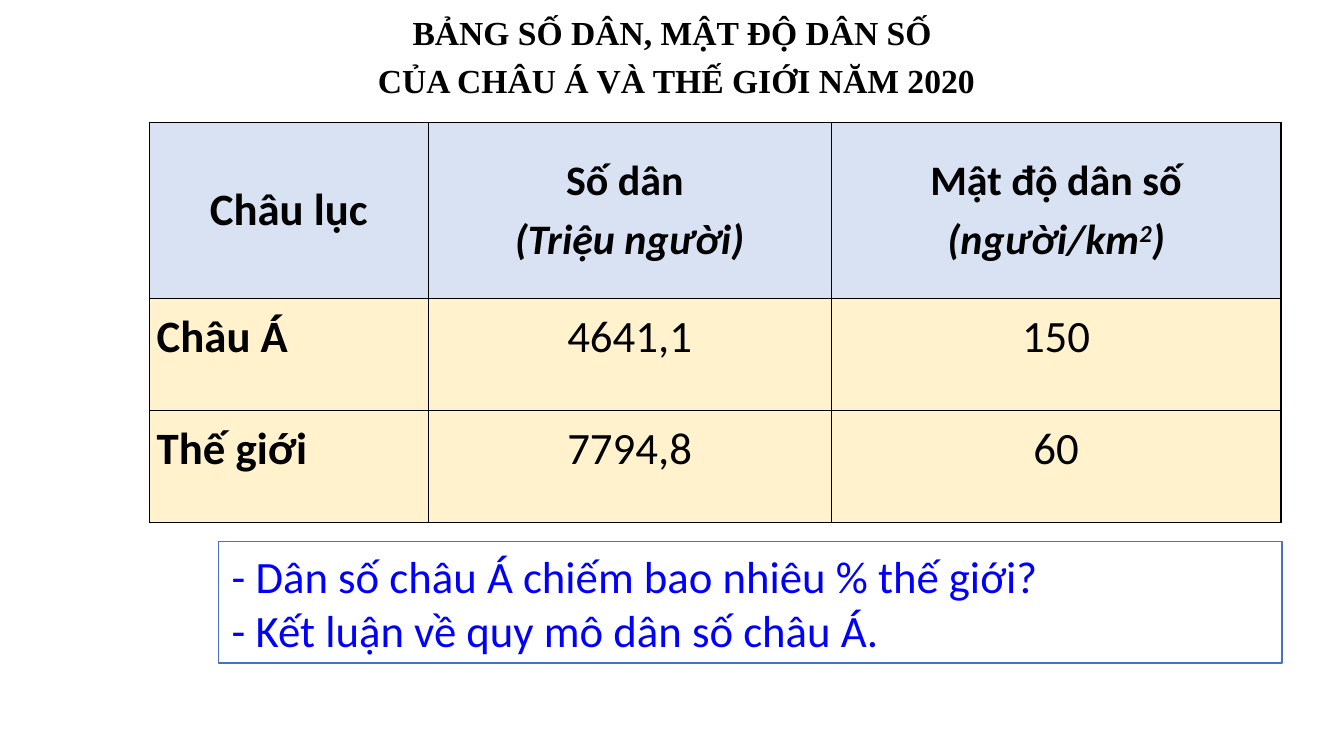
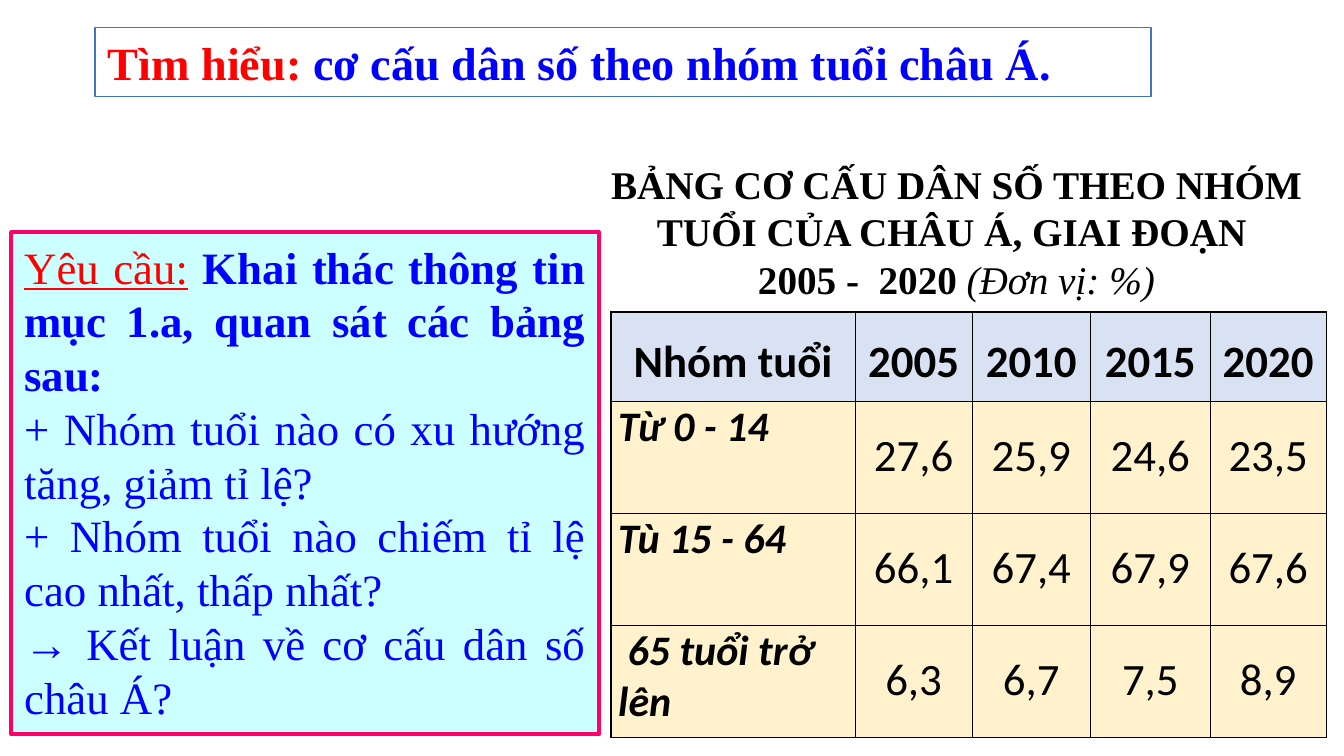
from dataclasses import dataclass, replace
from typing import Optional

from pptx import Presentation
from pptx import oxml
from pptx.dml.color import RGBColor
from pptx.enum import text
from pptx.oxml import ns
from pptx.util import Cm, Pt

SERIF, SANS = "Times New Roman", "Calibri"
BLACK, WHITE, RED, BLUE = "000000", "FFFFFF", "FF0000", "0000FF"
BOX_LINE, PINK, AQUA = "4472C4", "FF0066", "CCFFFF"
HEADER_FILL, BODY_FILL = "D9E2F3", "FFF2CC"
LEFT, CENTER, JUSTIFY = (text.PP_ALIGN.LEFT, text.PP_ALIGN.CENTER,
                         text.PP_ALIGN.JUSTIFY)
TOP, MIDDLE = text.MSO_ANCHOR.TOP, text.MSO_ANCHOR.MIDDLE


@dataclass(frozen=True)
class Style:
    size: float = 32
    font: str = SANS
    color: str = BLACK
    bold: bool = False
    italic: bool = False
    align: int = LEFT
    spacing: float = 1.0
    before: float = 0


@dataclass(frozen=True)
class Span:
    """A stretch of text that differs from its paragraph's style."""
    words: str
    color: Optional[str] = None
    bold: Optional[bool] = None
    italic: Optional[bool] = None
    underline: Optional[bool] = None
    raised: bool = False


HEADING = Style(24, SERIF, bold=True, align=CENTER)
HEADER = Style(bold=True, align=CENTER, before=6)
VALUE = Style(align=CENTER, spacing=1.2, before=6)
LABEL = Style(bold=True, spacing=1.2, before=6)


def rgb(value):
    return RGBColor.from_string(value)


def add_span(para, span):
    for number, line in enumerate(span.words.split("\n")):
        if number:
            para.add_line_break()
        run = para.add_run()
        run.text = line
        run.font.bold = span.bold
        run.font.italic = span.italic
        run.font.underline = span.underline
        if span.color:
            run.font.color.rgb = rgb(span.color)
        if span.raised:
            run.font._element.set("baseline", "30000")


def write(frame, paragraphs, style):
    """Fill a text frame; each paragraph is a string or a list of spans."""
    for number, content in enumerate(paragraphs):
        para = frame.add_paragraph() if number else frame.paragraphs[0]
        para.alignment = style.align
        para.line_spacing = style.spacing
        para.space_before = Pt(style.before)
        font = para.font
        font.size, font.name = Pt(style.size), style.font
        font.bold, font.italic = style.bold, style.italic
        font.color.rgb = rgb(style.color)
        spans = [Span(content)] if isinstance(content, str) else content
        for span in spans:
            add_span(para, span)


def place(shape, left, top, width, height):
    shape.left, shape.top = Cm(left), Cm(top)
    shape.width, shape.height = Cm(width), Cm(height)


def set_text(shape, paragraphs, style, anchor):
    frame = shape.text_frame
    frame.word_wrap = True
    frame.auto_size = text.MSO_AUTO_SIZE.NONE
    frame.vertical_anchor = anchor
    write(frame, paragraphs, style)


def frame_box(shape, fill, line, weight):
    """Turn a placeholder into a filled, outlined box with wide insets."""
    shape.fill.solid()
    shape.fill.fore_color.rgb = rgb(fill)
    shape.line.color.rgb = rgb(line)
    shape.line.width = Pt(weight)
    frame = shape.text_frame
    frame.margin_left = frame.margin_right = Cm(0.33)
    frame.margin_top = frame.margin_bottom = Cm(0.18)


def clear_bullets(shape):
    for para in shape.text_frame.paragraphs:
        props = para._p.get_or_add_pPr()
        props.set("marL", "0")
        props.set("indent", "0")
        none = oxml.parse_xml(f"<a:buNone {ns.nsdecls('a')}/>")
        props.insert_element_before(none, "a:tabLst", "a:defRPr", "a:extLst")


def add_borders(cell):
    props = cell._tc.get_or_add_tcPr()
    for side in ("lnL", "lnR", "lnT", "lnB"):
        props.append(oxml.parse_xml(
            f'<a:{side} {ns.nsdecls("a")} w="12700"><a:solidFill>'
            f'<a:srgbClr val="{BLACK}"/></a:solidFill></a:{side}>'))


def fill_cell(cell, paragraphs, style, fill, anchor):
    add_borders(cell)
    cell.fill.solid()
    cell.fill.fore_color.rgb = rgb(fill)
    cell.margin_left = cell.margin_right = Cm(0.18)
    cell.margin_top = cell.margin_bottom = 0
    cell.vertical_anchor = anchor
    write(cell.text_frame, paragraphs, style)


def add_data_table(page, left, top, widths, heights, header, rows, label, value):
    """Header cells are (paragraphs, style); rows hold a label, then values."""
    table = page.shapes.add_table(
        len(heights), len(widths), Cm(left), Cm(top),
        Cm(sum(widths)), Cm(sum(heights))).table
    table.first_row = table.horz_banding = False
    for column, width in zip(table.columns, widths):
        column.width = Cm(width)
    for row, height in zip(table.rows, heights):
        row.height = Cm(height)
    for column, (paragraphs, style) in enumerate(header):
        fill_cell(table.cell(0, column), paragraphs, style, HEADER_FILL, MIDDLE)
    for number, row in enumerate(rows, 1):
        for column, words in enumerate(row):
            style = value if column else label
            fill_cell(table.cell(number, column), [words], style, BODY_FILL, TOP)


def add_page(deck):
    page = deck.slides.add_slide(deck.slide_layouts[1])
    return page, page.shapes.title, page.placeholders[1]


def build_population(deck):
    page, title, questions = add_page(deck)
    place(title, 7.57, 0, 18.95, 2.62)
    set_text(title, ["BẢNG SỐ DÂN, MẬT ĐỘ DÂN SỐ ",
                     "CỦA CHÂU Á VÀ THẾ GIỚI NĂM 2020"],
             replace(HEADING, spacing=1.2), MIDDLE)

    unit_header = replace(HEADER, size=30)
    header = [
        (["Châu lục"], HEADER),
        (["Số dân ", [Span("(Triệu người)", italic=True)]], unit_header),
        (["Mật độ dân số", [Span("(người/km", italic=True),
                            Span("2", italic=True, raised=True),
                            Span(")", italic=True)]], unit_header),
    ]
    rows = [("Châu Á", "4641,1", "150"), ("Thế giới", "7794,8", "60")]
    add_data_table(page, 3.77, 3.08, [7.02, 10.16, 11.33], [4.45, 2.82, 2.82],
                   header, rows, LABEL, VALUE)

    place(questions, 5.51, 13.64, 26.8, 3.07)
    set_text(questions, ["- Dân số châu Á chiếm bao nhiêu % thế giới?",
                         "- Kết luận về quy mô dân số châu Á."],
             Style(color=BLUE, align=JUSTIFY), TOP)
    clear_bullets(questions)
    frame_box(questions, WHITE, BOX_LINE, 1)


def build_age_groups(deck):
    page, title, tasks = add_page(deck)
    place(title, 2.39, 0.69, 26.62, 1.75)
    set_text(title, [[Span("Tìm hiểu: ", color=RED),
                      Span("cơ cấu dân số theo nhóm tuổi châu Á.")]],
             Style(33, SERIF, BLUE, bold=True), TOP)
    frame_box(title, WHITE, BOX_LINE, 1)

    place(tasks, 0.28, 5.85, 14.81, 12.65)
    set_text(tasks, [
        [Span("Yêu cầu:", color=RED, underline=True), Span(" "),
         Span("Khai thác thông tin mục 1.a, quan sát các bảng sau: ", bold=True)],
        "+ Nhóm tuổi nào có xu hướng tăng, giảm tỉ lệ?",
        "+ Nhóm tuổi nào chiếm tỉ lệ cao nhất, thấp nhất?",
        "→ Kết luận về cơ cấu dân số châu Á?",
    ], Style(font=SERIF, color=BLUE, align=JUSTIFY), TOP)
    clear_bullets(tasks)
    frame_box(tasks, AQUA, PINK, 3)

    caption = page.shapes.add_textbox(Cm(14.81), Cm(3.91), Cm(18.59), Cm(3.84))
    set_text(caption, [[
        Span("BẢNG CƠ CẤU DÂN SỐ THEO NHÓM TUỔI CỦA CHÂU Á, GIAI ĐOẠN \n"
             "2005 -  2020 "),
        Span("(Đơn vị: %)", bold=False, italic=True),
    ]], replace(HEADING, size=28), MIDDLE)

    header_style = replace(HEADER, spacing=1.2)
    header = [([words], header_style)
              for words in ("Nhóm tuổi", "2005", "2010", "2015", "2020")]
    rows = [("Từ 0 - 14", "27,6", "25,9", "24,6", "23,5"),
            ("Tù 15 - 64", "66,1", "67,4", "67,9", "67,6"),
            (" 65 tuổi trở lên", "6,3", "6,7", "7,5", "8,9")]
    add_data_table(page, 15.4, 7.86, [6.15, 2.95, 2.98, 3.02, 2.92],
                   [2.26, 2.82, 2.82, 2.82], header, rows,
                   Style(30, bold=True, italic=True),
                   replace(VALUE, spacing=1.5))


def main():
    deck = Presentation()
    deck.slide_width, deck.slide_height = Cm(33.87), Cm(19.05)
    build_population(deck)
    build_age_groups(deck)
    deck.save("out.pptx")


if __name__ == "__main__":
    main()
